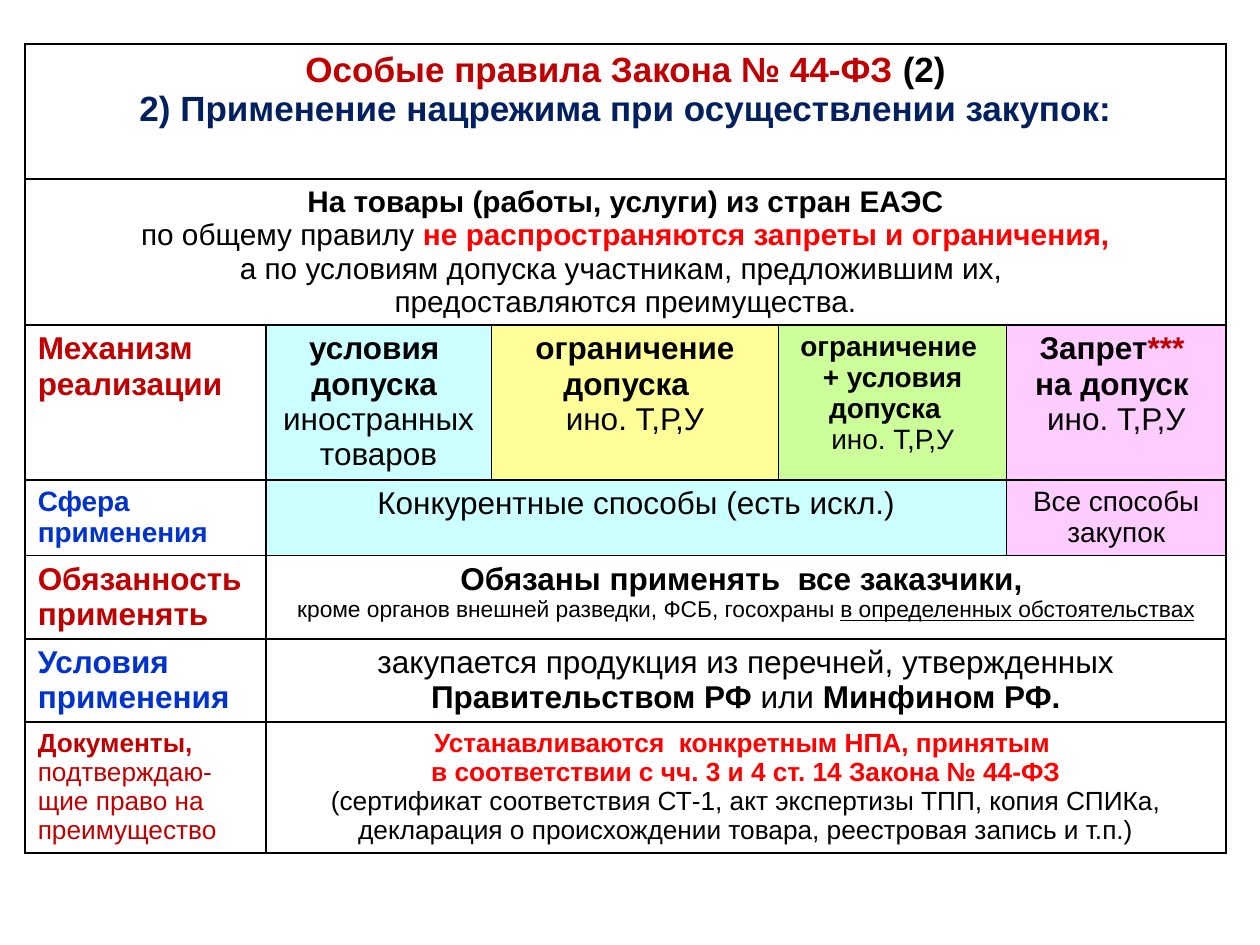
from lxml import etree
from pptx import Presentation, util as u
from pptx.dml.color import RGBColor
from pptx.enum import text
from pptx.oxml.ns import qn

COLS = [1.91, 1.79, 2.28, 1.81, 1.74]
ROWS = [1.07, 1.16, 1.23, 0.6, 0.66, 0.66, 1.04]
LEFT, TOP = 0.2, 0.35
BLACK, WHITE, DARK_RED, RED = "000000", "FFFFFF", "C00000", "FF0000"
BLUE, NAVY, CYAN, PINK = "0033CC", "002060", "CCFFFF", "FFCCFF"
BOLD = {"bold": True}
BOLD_RED = {"bold": True, "color": RED}

# Each cell: row, column, columns spanned, fill, text size, paragraphs of (text, format) runs
BODY = [
    (0, 0, 5, WHITE, 20, [
        [("Особые правила Закона № 44-ФЗ ", {"bold": True, "color": DARK_RED}), ("(2)", BOLD)],
        [("2) Применение нацрежима при осуществлении закупок:", {"bold": True, "color": NAVY})]]),
    (1, 0, 5, WHITE, 17, [
        [("На товары (работы, услуги) из стран ЕАЭС", BOLD)],
        [("по общему правилу ", {}), ("не распространяются запреты и ограничения,", BOLD_RED)],
        [("а по условиям допуска участникам, предложившим их, ", {})],
        [("предоставляются преимущества.", {})]]),
    (2, 1, 1, CYAN, 18, [
        [("условия  допуска ", BOLD)], [("иностранных товаров", {})]]),
    (2, 2, 1, "FFFF99", 18, [
        [("ограничение допуска  ", BOLD)], [("ино. Т,Р,У", {})]]),
    (2, 3, 1, "CCFF99", 16, [
        [("ограничение  + условия допуска  ", BOLD)], [("ино. Т,Р,У", {})]]),
    (2, 4, 1, PINK, 18, [
        [("Запрет", BOLD), ("*** ", {"bold": True, "color": DARK_RED})],
        [("на допуск ", BOLD)], [("ино. Т,Р,У", {})]]),
    (3, 1, 3, CYAN, 18, [[("Конкурентные способы (есть искл.)", {})]]),
    (3, 4, 1, PINK, 16, [[("Все способы закупок", {})]]),
    (4, 1, 4, WHITE, 18, [
        [("Обязаны применять  все заказчики, ", BOLD)],
        [("кроме органов внешней разведки, ФСБ, госохраны ", {"size": 13}),
         ("в определенных обстоятельствах", {"size": 13, "underline": True})]]),
    (5, 1, 4, WHITE, 18, [
        [("закупается продукция из перечней, утвержденных ", {}), ("Правительством РФ ", BOLD),
         ("или", {}), (" Минфином РФ.", BOLD)]]),
    (6, 1, 4, WHITE, 15, [
        [("Устанавливаются  конкретным НПА, принятым \n"
          "в соответствии с чч. 3 и 4 ст. 14 Закона № 44-ФЗ\n", BOLD_RED),
         ("(сертификат соответствия СТ-1, акт экспертизы ТПП, копия СПИКа, "
          "декларация о происхождении товара, реестровая запись и т.п.)", {})]]),
]

# Row headings: row, size, colour, bold part, plain part
HEADINGS = [
    (2, 18, DARK_RED, "Механизм реализации", ""),
    (3, 16, BLUE, "Сфера применения", ""),
    (4, 18, DARK_RED, "Обязанность применять", ""),
    (5, 18, BLUE, "Условия применения", ""),
    (6, 15, DARK_RED, "Документы, ", "подтверждаю-щие право на преимущество"),
]


def rgb(value):
    return RGBColor.from_string(value)


def add_run(p, words, size, style):
    """Add one run; each newline in words becomes a line break."""
    values = {"name": "Arial", "size": size, "bold": False, "color": BLACK} | style
    values["size"] = u.Pt(values["size"])
    color = values.pop("color")
    for i, line in enumerate(words.split("\n")):
        if i:
            p.add_line_break()
        if line:
            r = p.add_run()
            r.text = line
            for key, value in values.items():
                setattr(r.font, key, value)
            r.font.color.rgb = rgb(color)


def set_borders(cell):
    pr = cell._tc.get_or_add_tcPr()
    for i, side in enumerate(("lnL", "lnR", "lnT", "lnB")):
        ln = etree.Element(qn(f"a:{side}"), w=str(u.Pt(1)))
        fill = etree.SubElement(ln, qn("a:solidFill"))
        etree.SubElement(fill, qn("a:srgbClr"), val=BLACK)
        pr.insert(i, ln)


def fill_cell(table, row, col, span, fill, size, paragraphs, align=text.PP_ALIGN.CENTER):
    cell = table.cell(row, col)
    if span > 1:
        cell.merge(table.cell(row, col + span - 1))
    cell.fill.solid()
    cell.fill.fore_color.rgb = rgb(fill)
    tf = cell.text_frame
    for i, runs in enumerate(paragraphs):
        p = tf.add_paragraph() if i else tf.paragraphs[0]
        p.alignment = align
        for words, style in runs:
            add_run(p, words, size, style)


def add_rules_table(s):
    frame = s.shapes.add_table(len(ROWS), len(COLS), u.Inches(LEFT), u.Inches(TOP),
                               u.Inches(sum(COLS)), u.Inches(sum(ROWS)))
    table = frame.table
    table.first_row = table.horz_banding = False
    for column, width in zip(table.columns, COLS):
        column.width = u.Inches(width)
    for row, height in zip(table.rows, ROWS):
        row.height = u.Inches(height)
    for spec_row in BODY:
        fill_cell(table, *spec_row)
    for row, size, color, strong, plain in HEADINGS:
        runs = [(strong, {"bold": True, "color": color}), (plain, {"color": color})]
        fill_cell(table, row, 0, 1, WHITE, size, [runs], text.PP_ALIGN.LEFT)
    for cell in table.iter_cells():
        set_borders(cell)


def main():
    prs = Presentation()
    prs.slide_width, prs.slide_height = u.Inches(10), u.Inches(7.5)
    s = prs.slides.add_slide(prs.slide_layouts[6])
    add_rules_table(s)
    prs.save("out.pptx")


if __name__ == "__main__":
    main()
